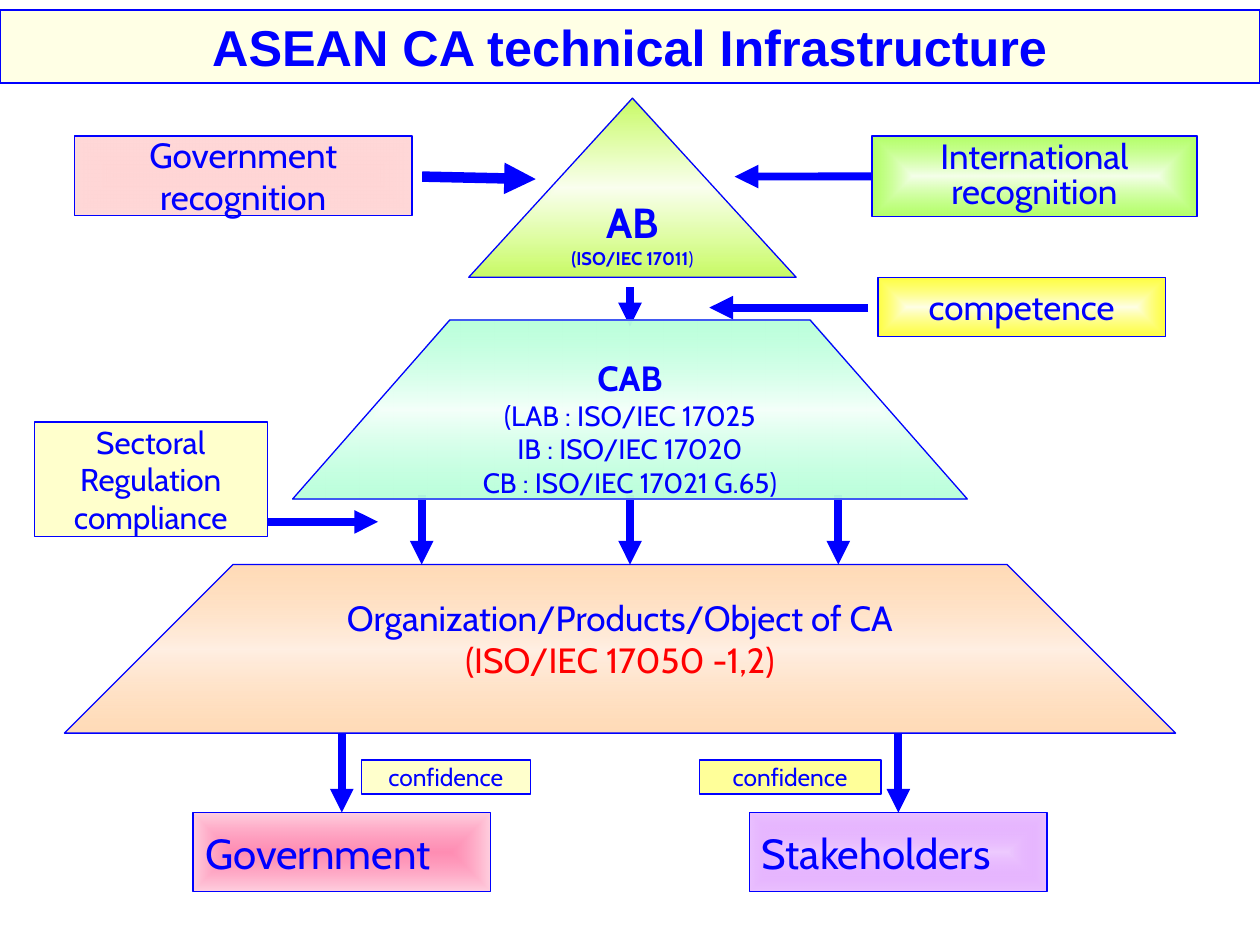
from lxml import etree
from pptx import Presentation
from pptx.dml.color import RGBColor
from pptx.enum.shapes import MSO_CONNECTOR, MSO_SHAPE
from pptx.enum.text import MSO_ANCHOR, PP_ALIGN
from pptx.oxml.ns import qn
from pptx.util import Cm, Pt

RECT, TRIANGLE = MSO_SHAPE.RECTANGLE, MSO_SHAPE.ISOSCELES_TRIANGLE
STRAIGHT = MSO_CONNECTOR.STRAIGHT
TOP, MIDDLE, BOTTOM = MSO_ANCHOR.TOP, MSO_ANCHOR.MIDDLE, MSO_ANCHOR.BOTTOM
LEFT, CENTER = PP_ALIGN.LEFT, PP_ALIGN.CENTER
TOP_SIDE, LEFT_SIDE = 0, 1
NONE = (0, 0, 0, 0)
THIN = (0.05, 0.03, 0.05, 0.03)
NORMAL = (0.25, 0.13, 0.25, 0.13)

COLORS = {
    "blue": "0000FF", "red": "FF0000", "cream": "FFFFCC", "straw": "FFFF99",
    "lime": "CCFF66", "lime edge": "C8FB64",
    "peach": "FFEFE3", "peach edge": "FFCC99",
    "mint": "99FFCC", "mint edge": "BBFFDB",
    "pink": "FF8EB4", "pink edge": "FF6699",
    "lilac": "EECBFF", "lilac edge": "CC66FF",
    "yellow": "FFFF00", "yellow edge": "FFFF43",
    "rose": "FFCCCC", "rose edge": "FFD9D9",
    "green": "99FF33", "green edge": "B4FF69",
}


class Diagram:
    """Draws the elements of the diagram on one slide in a shared style."""

    def __init__(self, slide, font="Cabin"):
        self.s = slide
        self.font = font

    def color(self, name):
        return RGBColor.from_string(COLORS[name])

    def alpha(self, clr, percent):
        if percent < 100:
            etree.SubElement(clr, qn("a:alpha"), val=str(percent * 1000))

    def paint(self, sp, fill, line=0.75):
        sp.shadow.inherit = False
        sp.line.color.rgb = self.color("blue")
        sp.line.width = Pt(line)
        spPr = sp._element.spPr
        if len(fill) == 1:
            sp.fill.solid()
            sp.fill.fore_color.rgb = self.color(fill[0][0])
            self.alpha(spPr.find(qn("a:solidFill"))[0], fill[0][1])
            return
        sp.fill.gradient()
        grad = spPr.find(qn("a:gradFill"))
        for stop, gs, (name, percent) in zip(sp.fill.gradient_stops, grad.iter(qn("a:gs")), fill):
            stop.color.rgb = self.color(name)
            self.alpha(gs[0], percent)
        grad.remove(grad.find(qn("a:lin")))
        shade = etree.SubElement(grad, qn("a:path"), path="shape")
        etree.SubElement(shade, qn("a:fillToRect"), l="50000", t="50000", r="50000", b="50000")

    def text(self, sp, paragraphs, size, bold=False, font=None, anchor=MIDDLE,
             align=CENTER, inset=THIN, wrap=True, spacing=None):
        tf = sp.text_frame
        tf.word_wrap = wrap
        tf.vertical_anchor = anchor
        for side, value in zip(("left", "top", "right", "bottom"), inset):
            setattr(tf, "margin_" + side, Cm(value))
        for i, runs in enumerate(paragraphs):
            p = tf.add_paragraph() if i else tf.paragraphs[0]
            p.alignment = align
            if spacing:
                p.line_spacing = spacing
            for words, changes in runs:
                r = p.add_run()
                r.text = words
                fmt = {"size": size, "bold": bold, "name": font or self.font, "color": "blue", **changes}
                r.font.color.rgb = self.color(fmt.pop("color"))
                fmt["size"] = Pt(fmt["size"])
                for key, value in fmt.items():
                    setattr(r.font, key, value)

    def box(self, at, fill, paragraphs, size, shape=RECT, line=0.75, **style):
        sp = self.s.shapes.add_shape(shape, *map(Cm, at))
        self.paint(sp, fill, line)
        self.text(sp, paragraphs, size, **style)
        return sp

    def trapezoid(self, at, slope, fill, paragraphs, size, **style):
        x, y, w, h = at
        fb = self.s.shapes.build_freeform(Cm(x), Cm(y + h))
        corners = ((x + slope, y), (x + w - slope, y), (x + w, y + h))
        fb.add_line_segments([(Cm(a), Cm(b)) for a, b in corners], close=True)
        sp = fb.convert_to_shape()
        self.paint(sp, fill)
        self.text(sp, paragraphs, size, wrap=False, **style)

    def arrow(self, *ends, width=4.5, begin=None, end=None):
        cn = self.s.shapes.add_connector(STRAIGHT, *map(Cm, ends))
        cn.line.color.rgb = self.color("blue")
        cn.line.width = Pt(width)
        spPr = cn._element.spPr
        etree.SubElement(spPr.find(qn("a:ln")), qn("a:tailEnd"), type="triangle")
        etree.SubElement(spPr, qn("a:effectLst"))
        if begin:
            cn.begin_connect(*begin)
        if end:
            cn.end_connect(*end)


def plain(*lines):
    return [[(line, {})] for line in lines]


def fade(name, inner=100, outer=100):
    return [(name, inner), (name + " edge", outer)]


def main():
    prs = Presentation()
    prs.slide_width, prs.slide_height = Cm(25.4), Cm(19.05)
    d = Diagram(prs.slides.add_slide(prs.slide_layouts[6]))
    middle = 12.7

    d.box((0, 0.2, 25.4, 1.48), [("cream", 50)], plain("ASEAN CA technical Infrastructure"),
          28.8, line=1.25, bold=True, font="Arial", inset=NORMAL)
    d.box((9.45, 1.98, 6.6, 3.61), fade("lime", 10),
          [[("AB", {"size": 24})], [("(ISO/IEC 17011", {}), (")", {"bold": False})]],
          10.5, shape=TRIANGLE, bold=True, inset=NONE)
    d.trapezoid((1.3, 11.38, 22.4, 3.4), 3.4, fade("peach", 100, 70),
                [[("Organization/Products/Object of CA", {})],
                 [("(ISO/IEC 17050 -1,2)", {"color": "red"})]],
                20, anchor=TOP, inset=(0.05, 0.64, 0.05, 0.03))

    d.arrow(middle, 5.79, middle, 6.58)
    for x in (middle - 4.2, middle, middle + 4.2):
        d.arrow(x, 9.98, x, 11.38)
    d.trapezoid((5.9, 6.45, 13.6, 3.61), 3.17, fade("mint", 10),
                [[("CAB", {"size": 20, "bold": True})]]
                + plain("(LAB : ISO/IEC 17025", "IB : ISO/IEC 17020", "CB : ISO/IEC 17021 G.65)"),
                16, anchor=BOTTOM, inset=NONE)

    receivers = (("Government", 3.89, fade("pink", 100, 30)),
                 ("Stakeholders", 15.11, fade("lilac", 100, 40)))
    for name, x, fill in receivers:
        sp = d.box((x, 16.38, 6, 1.6), fill, plain(name), 24,
                   align=LEFT, inset=NORMAL, wrap=False)
        d.arrow(x + 3, 14.78, x + 3, 16.38, end=(sp, TOP_SIDE))
    for x, w, name in ((7.29, 3.4, "cream"), (14.1, 3.66, "straw")):
        d.box((x, 15.32, w, 0.69), [(name, 100)], plain("confidence"), 14)

    d.box((1.5, 2.74, 6.81, 1.6), fade("rose", 80), plain("Government", "recognition"), 20, wrap=False)
    d.arrow(8.51, 3.56, 10.8, 3.61, width=6)
    sp = d.box((17.58, 2.74, 6.55, 1.63), fade("green", 10), plain("International recognition"),
               20, inset=NONE, spacing=0.85)
    d.arrow(17.58, 3.56, 14.81, 3.56, begin=(sp, LEFT_SIDE))
    d.box((17.7, 5.59, 5.79, 1.19), fade("yellow", 10), plain("competence"), 20,
          inset=NORMAL, wrap=False)
    d.arrow(17.5, 6.2, 14.3, 6.2)
    d.box((0.69, 8.51, 4.7, 2.31), [("cream", 100)], plain("Sectoral Regulation", "compliance"),
          18, inset=NONE)
    d.arrow(5.39, 10.52, 7.62, 10.52)
    prs.save("out.pptx")


if __name__ == "__main__":
    main()
